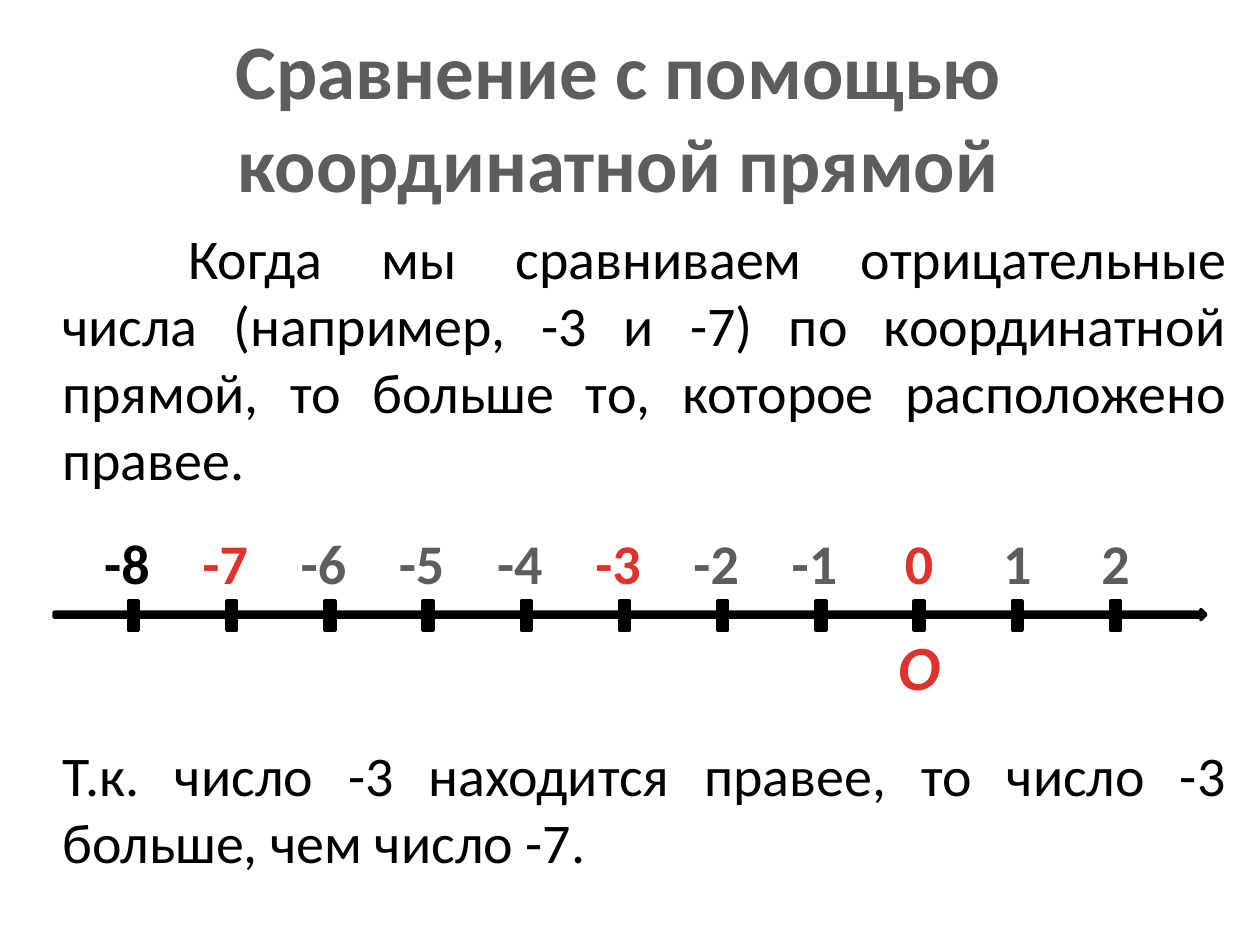
from lxml import etree
from pptx import Presentation
from pptx.dml.color import RGBColor
from pptx.enum import shapes, text
from pptx.oxml import ns
from pptx.util import Cm, Pt

BLACK = RGBColor(0x00, 0x00, 0x00)
GRAY = RGBColor(0x5D, 0x5D, 0x5D)
RED = RGBColor(0xE0, 0x32, 0x2D)
FONT = "Calibri"

FIRST_NUMBER, LAST_NUMBER = -8, 2
FIRST_TICK, TICK_STEP = 2.69, 1.98
MINUS_SHIFT = 0.13
LABEL_COLORS = {-8: BLACK, -7: RED, -3: RED, 0: RED}


def place(item, left, top, width, height):
    item.left, item.top = Cm(left), Cm(top)
    item.width, item.height = Cm(width), Cm(height)


def style(paragraph, size, color, bold=False, italic=False):
    for run in paragraph.runs:
        run.font.name = FONT
        run.font.size = Pt(size)
        run.font.bold = bold
        run.font.italic = italic
        run.font.color.rgb = color


def fill_title(title):
    place(title, 4.29, 0.33, 16.36, 4.01)
    frame = title.text_frame
    frame.text = "Сравнение с помощью\nкоординатной прямой"
    frame.auto_size = text.MSO_AUTO_SIZE.NONE
    frame.vertical_anchor = text.MSO_ANCHOR.TOP
    frame.word_wrap = False
    for line in frame.paragraphs:
        line.alignment = text.PP_ALIGN.CENTER
        style(line, 44, GRAY, bold=True)


def fill_explanation(body):
    place(body, 1, 4.37, 24, 12.65)
    frame = body.text_frame
    frame.text = (
        "Когда мы сравниваем отрицательные числа (например, -3 и -7) "
        "по координатной прямой, то больше то, которое расположено правее.\n"
        "Т.к. число -3 находится правее, то число -3 больше, чем число -7."
    )
    frame.auto_size = text.MSO_AUTO_SIZE.NONE
    for paragraph, indent, gap in zip(frame.paragraphs, (2.54, 0), (0, 142)):
        properties = paragraph._p.get_or_add_pPr()
        properties.set("marL", "0")
        properties.set("indent", str(Cm(indent)))
        etree.SubElement(properties, ns.qn("a:buNone"))
        paragraph.alignment = text.PP_ALIGN.JUSTIFY
        paragraph.space_before = Pt(gap)
        style(paragraph, 32, BLACK)


def add_black_shape(slide, kind, left, top, width, height):
    shape = slide.shapes.add_shape(kind, Cm(left), Cm(top), Cm(width), Cm(height))
    shape.shadow.inherit = False
    shape.fill.solid()
    shape.fill.fore_color.rgb = BLACK
    shape.line.color.rgb = BLACK
    shape.line.width = Pt(2)


def add_label(slide, wording, center, top, size, color, italic=False):
    width = 1.6
    label = slide.shapes.add_textbox(
        Cm(center - width / 2), Cm(top), Cm(width), Cm(size * 0.05)
    )
    frame = label.text_frame
    frame.word_wrap = True
    frame.text = wording
    frame.paragraphs[0].alignment = text.PP_ALIGN.CENTER
    style(frame.paragraphs[0], size, color, bold=True, italic=italic)


def add_number_line(slide):
    add_black_shape(slide, shapes.MSO_SHAPE.RIGHT_ARROW, 1.09, 12.29, 23.22, 0.2)
    for position, number in enumerate(range(FIRST_NUMBER, LAST_NUMBER + 1)):
        center = FIRST_TICK + position * TICK_STEP
        add_black_shape(
            slide, shapes.MSO_SHAPE.RECTANGLE, center - 0.1, 12.12, 0.2, 0.58
        )
        shift = MINUS_SHIFT if number < 0 else 0
        color = LABEL_COLORS.get(number, GRAY)
        add_label(slide, str(number), center - shift, 10.52, 32, color)
    origin = FIRST_TICK - FIRST_NUMBER * TICK_STEP
    add_label(slide, "О", origin, 12.52, 36, RED, italic=True)


def main():
    deck = Presentation()
    deck.slide_width, deck.slide_height = Cm(25.4), Cm(19.05)
    slide = deck.slides.add_slide(deck.slide_layouts[1])
    fill_title(slide.shapes.title)
    fill_explanation(slide.placeholders[1])
    add_number_line(slide)
    deck.save("out.pptx")


if __name__ == "__main__":
    main()
